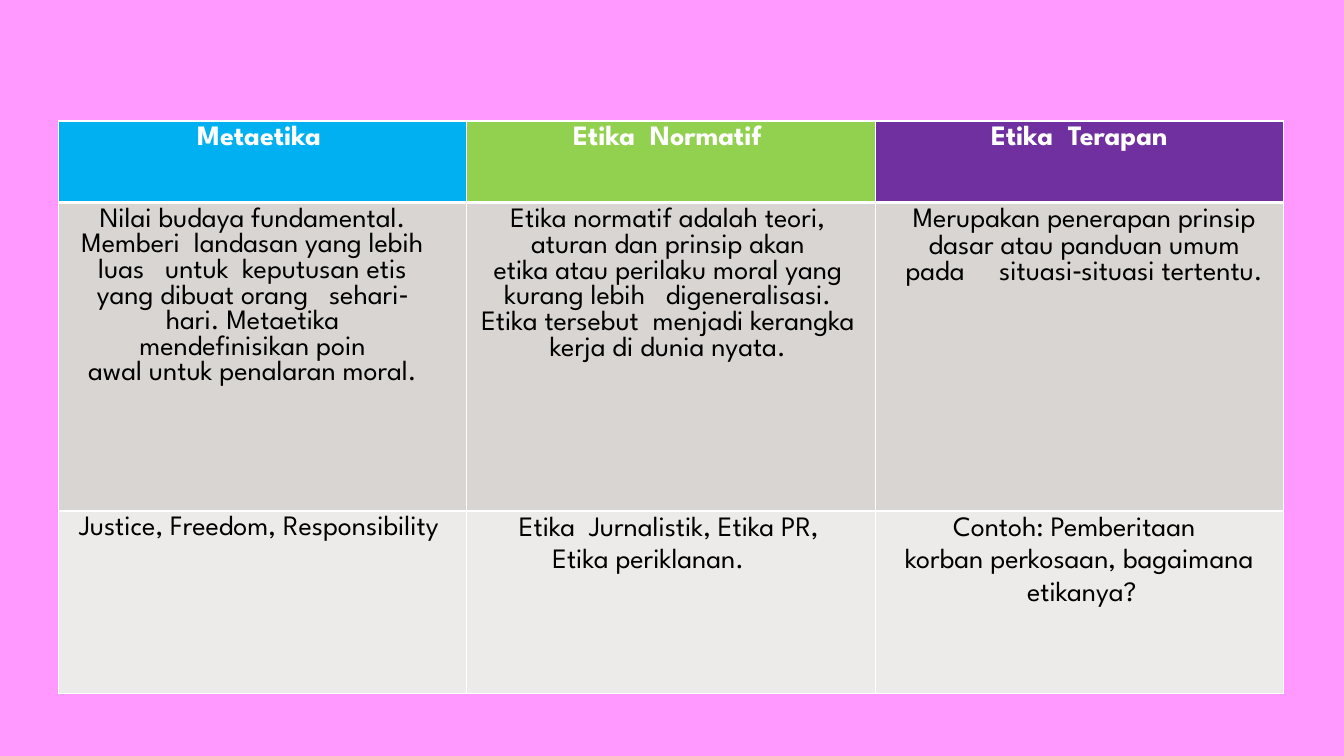
from pptx import Presentation
from pptx.dml.color import RGBColor
from pptx.enum import text
from pptx.oxml import parse_xml
from pptx.oxml.ns import nsdecls
from pptx.util import Inches, Pt

PINK = RGBColor(0xFF, 0x99, 0xFF)
WHITE = RGBColor(0xFF, 0xFF, 0xFF)
BLACK = RGBColor(0, 0, 0)
BLUE = RGBColor(0x00, 0xB0, 0xF0)
GREEN = RGBColor(0x92, 0xD0, 0x50)
PURPLE = RGBColor(0x70, 0x30, 0xA0)
GREY = RGBColor(0xD8, 0xD5, 0xD2)
LIGHT = RGBColor(0xED, 0xEB, 0xEA)
FONT = "League Spartan"

ROW_HEIGHTS = [0.81, 3.06, 1.81]
ROW_FILLS = [[BLUE, GREEN, PURPLE], [GREY] * 3, [LIGHT] * 3]

# Each cell: paragraphs, left indent, right indents, line spacing, space before
# (\v is a line break)
CELLS = [
    [(["Metaetika"], 0, [0.07], None, 0),
     (["Etika  Normatif"], 0, [0.07], None, 0),
     (["Etika  Terapan"], 0, [0], None, 0)],
    [(["Nilai budaya fundamental.\vMemberi  landasan yang lebih\v"
       "luas   untuk  keputusan etis\vyang dibuat orang   sehari‐\v"
       "hari. Metaetika\vmendeﬁnisikan poin\vawal untuk penalaran moral."],
      0.1, [0.3], 0.99, 4.8),
     (["Etika normatif adalah teori,\vaturan dan prinsip akan\v"
       "etika atau perilaku moral yang\vkurang lebih   digeneralisasi.\v"
       "Etika tersebut  menjadi kerangka\vkerja di dunia nyata."],
      0, [0.06], None, 0),
     (["Merupakan penerapan prinsip\vdasar atau panduan umum\v"
       "pada     situasi‐situasi tertentu."], 0.1, [0], 1.02, 40)],
    [(["Justice, Freedom, Responsibility"], 0, [0.07], None, 0),
     (["Etika  Jurnalistik, Etika PR,", "Etika periklanan."],
      0.1, [0.14, 0.55], 1.02, 4.4),
     (["Contoh: Pemberitaan", "korban perkosaan, bagaimana", "etikanya?"],
      0.1, [0.2, 0.1, 0.05], 1.02, 4.4)],
]


def set_header_borders(cell):
    """White lines round the cell, with a thick one below."""
    tcPr = cell._tc.get_or_add_tcPr()
    for i, (side, width) in enumerate(zip("LRTB", (1, 1, 1, 3))):
        tcPr.insert(i, parse_xml(
            f'<a:ln{side} {nsdecls("a")} w="{Pt(width)}" cmpd="sng">'
            f'<a:solidFill><a:srgbClr val="{WHITE}"/></a:solidFill>'
            f'</a:ln{side}>'))


def write_cell(cell, content, color, bold):
    paragraphs, left, rights, spacing, before = content
    tf = cell.text_frame
    tf.text = "\n".join(paragraphs)
    for p, right in zip(tf.paragraphs, rights):
        p.alignment = text.PP_ALIGN.CENTER
        p.line_spacing = spacing
        p.space_before = Pt(before)
        pPr = p._p.get_or_add_pPr()
        pPr.set("marL", str(Inches(left)))
        pPr.set("marR", str(Inches(right)))
        pPr.set("indent", "0")
        # The paragraph font also sizes the line breaks
        for font in [p.font] + [r.font for r in p.runs]:
            font.name = FONT
            font.size = Pt(20)
            font.bold = bold
            font.color.rgb = color


def add_ethics_table(s, x, y, w, h):
    table = s.shapes.add_table(len(CELLS), len(CELLS[0]), Inches(x), Inches(y),
                               Inches(w), Inches(h)).table
    for column in table.columns:
        column.width = Inches(w / len(CELLS[0]))
    for i, height in enumerate(ROW_HEIGHTS):
        table.rows[i].height = Inches(height)
        header = i == 0
        for j, content in enumerate(CELLS[i]):
            cell = table.cell(i, j)
            cell.fill.solid()
            cell.fill.fore_color.rgb = ROW_FILLS[i][j]
            if header:
                set_header_borders(cell)
            write_cell(cell, content, WHITE if header else BLACK, header)


def main():
    prs = Presentation()
    prs.slide_width, prs.slide_height = Inches(13.33), Inches(7.5)
    s = prs.slides.add_slide(prs.slide_layouts[6])

    # Background
    s.background.fill.solid()
    s.background.fill.fore_color.rgb = PINK

    # Three branches of ethics
    add_ethics_table(s, 0.58, 1.2, 12.15, sum(ROW_HEIGHTS))
    prs.save("out.pptx")


if __name__ == "__main__":
    main()
